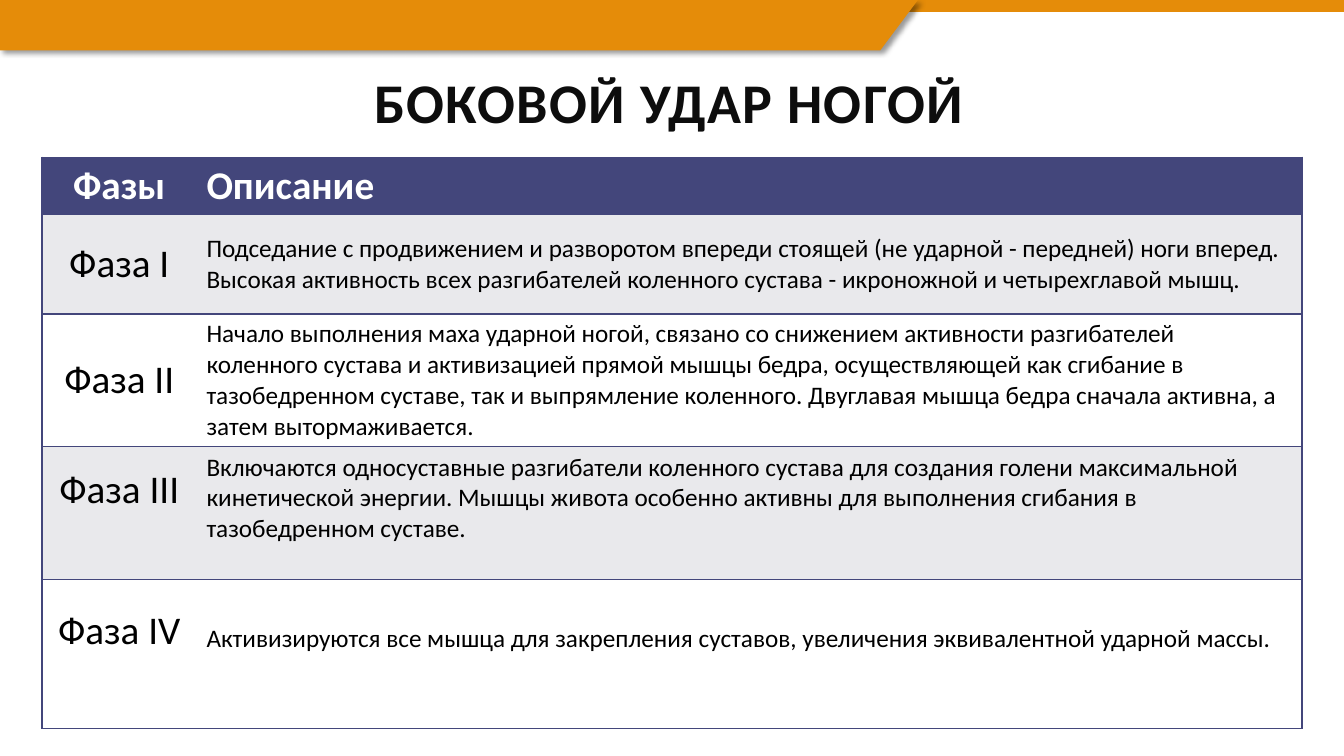
from lxml import etree
from pptx import Presentation
from pptx.dml.color import RGBColor
from pptx.enum.shapes import MSO_SHAPE
from pptx.enum.text import MSO_ANCHOR, PP_ALIGN
from pptx.oxml import parse_xml
from pptx.oxml.ns import qn
from pptx.util import Cm, Pt

RECT = MSO_SHAPE.RECTANGLE
MIDDLE = MSO_ANCHOR.MIDDLE
LEFT, CENTER = PP_ALIGN.LEFT, PP_ALIGN.CENTER

ORANGE = RGBColor(0xE5, 0x8C, 0x09)
NAVY = RGBColor(0x43, 0x46, 0x7B)
GREY = RGBColor(0xE9, 0xE9, 0xEC)
WHITE = RGBColor(0xFF, 0xFF, 0xFF)
BLACK = RGBColor(0, 0, 0)
DARK = RGBColor(0x0D, 0x0D, 0x0D)
FONT = "Calibri"
NS = "http://schemas.openxmlformats.org/drawingml/2006/main"

SHADOW = f"""<a:effectLst xmlns:a="{NS}">
<a:outerShdw blurRad="50800" dist="38100" dir="2700000" algn="tl" rotWithShape="0">
<a:srgbClr val="000000"><a:alpha val="40000"/></a:srgbClr>
</a:outerShdw></a:effectLst>"""

PHASES = [
    ("Фазы", "Описание"),
    ("Фаза I", "Подседание с продвижением и разворотом впереди стоящей "
     "(не ударной - передней) ноги вперед. Высокая активность всех "
     "разгибателей коленного сустава - икроножной и четырехглавой мышц."),
    ("Фаза II", "Начало выполнения маха ударной ногой, связано со снижением "
     "активности разгибателей коленного сустава и активизацией прямой мышцы "
     "бедра, осуществляющей как сгибание в тазобедренном суставе, так и "
     "выпрямление коленного. Двуглавая мышца бедра сначала активна, а затем "
     "вытормаживается."),
    ("Фаза III", "Включаются односуставные разгибатели коленного сустава для "
     "создания голени максимальной кинетической энергии. Мышцы живота особенно "
     "активны для выполнения сгибания в тазобедренном суставе."),
    ("Фаза IV", "Активизируются все мышца для закрепления суставов, увеличения "
     "эквивалентной ударной массы."),
]
COLS = [3.89, 27.86]
ROWS = [1.45, 2.5, 3.35, 3.35, 3.75]
RAISED = 3


def style(par, size, color, bold, align):
    par.alignment = align
    par.font.name = FONT
    par.font.size = Pt(size)
    par.font.bold = bold
    par.font.color.rgb = color


def paint(shape):
    shape.fill.solid()
    shape.fill.fore_color.rgb = ORANGE
    shape.line.fill.background()
    shape.shadow.inherit = False


def add_banner(slide, x, y, w, h):
    strip = slide.shapes.add_shape(RECT, Cm(x), Cm(y), Cm(w), Cm(0.3))
    paint(strip)
    build = slide.shapes.build_freeform(Cm(x), Cm(y))
    edge = x + 0.683 * w
    points = [(edge, y), (edge - 0.95, y + h), (x, y + h)]
    build.add_line_segments([(Cm(a), Cm(b)) for a, b in points], close=True)
    tab = build.convert_to_shape()
    paint(tab)
    props = tab._element.spPr
    props.replace(props.find(qn("a:effectLst")), parse_xml(SHADOW))


def add_title(slide, x, y, w, h):
    frame = slide.shapes.add_textbox(Cm(x), Cm(y), Cm(w), Cm(h)).text_frame
    frame.word_wrap = True
    frame.vertical_anchor = MIDDLE
    par = frame.paragraphs[0]
    run = par.add_run()
    run.text = "БОКОВОЙ УДАР НОГОЙ"
    run.font._element.set("spc", "100")
    style(par, 40, DARK, True, CENTER)


def add_border(cell, side, shown):
    props = cell._tc.get_or_add_tcPr()
    line = etree.SubElement(props, qn(f"a:ln{side}"), w=str(Pt(1)))
    if shown:
        fill = etree.SubElement(line, qn("a:solidFill"))
        etree.SubElement(fill, qn("a:srgbClr"), val=str(NAVY))
    else:
        etree.SubElement(line, qn("a:noFill"))


def fill_cell(cell, text, row, col):
    head, label = row == 0, col == 0
    for side in "LRTB":
        inner = side == ("R" if label else "L")
        add_border(cell, side, not inner)
    cell.fill.solid()
    cell.fill.fore_color.rgb = NAVY if head else GREY if row % 2 else WHITE
    cell.vertical_anchor = MIDDLE
    if row >= RAISED:
        cell.margin_bottom = Cm(1.3 if label else 0.89)
    cell.text = text
    style(cell.text_frame.paragraphs[0], 28 if head or label else 18,
          WHITE if head else BLACK, head, CENTER if label else LEFT)


def add_phases(slide, x, y, w, h):
    frame = slide.shapes.add_table(len(ROWS), len(COLS), Cm(x), Cm(y), Cm(w), Cm(h))
    table = frame.table
    for col, width in zip(table.columns, COLS):
        col.width = Cm(width * w / sum(COLS))
    for row, height in zip(table.rows, ROWS):
        row.height = Cm(height * h / sum(ROWS))
    for i, texts in enumerate(PHASES):
        for j, text in enumerate(texts):
            fill_cell(table.cell(i, j), text, i, j)


def main():
    deck = Presentation()
    deck.slide_width, deck.slide_height = Cm(33.87), Cm(19.05)
    slide = deck.slides.add_slide(deck.slide_layouts[6])
    add_banner(slide, 0, 0, 33.87, 1.27)
    add_title(slide, 1.85, 1.57, 30.02, 1.96)
    add_phases(slide, 1.06, 3.96, 31.75, 14.4)
    deck.save("out.pptx")


if __name__ == "__main__":
    main()
